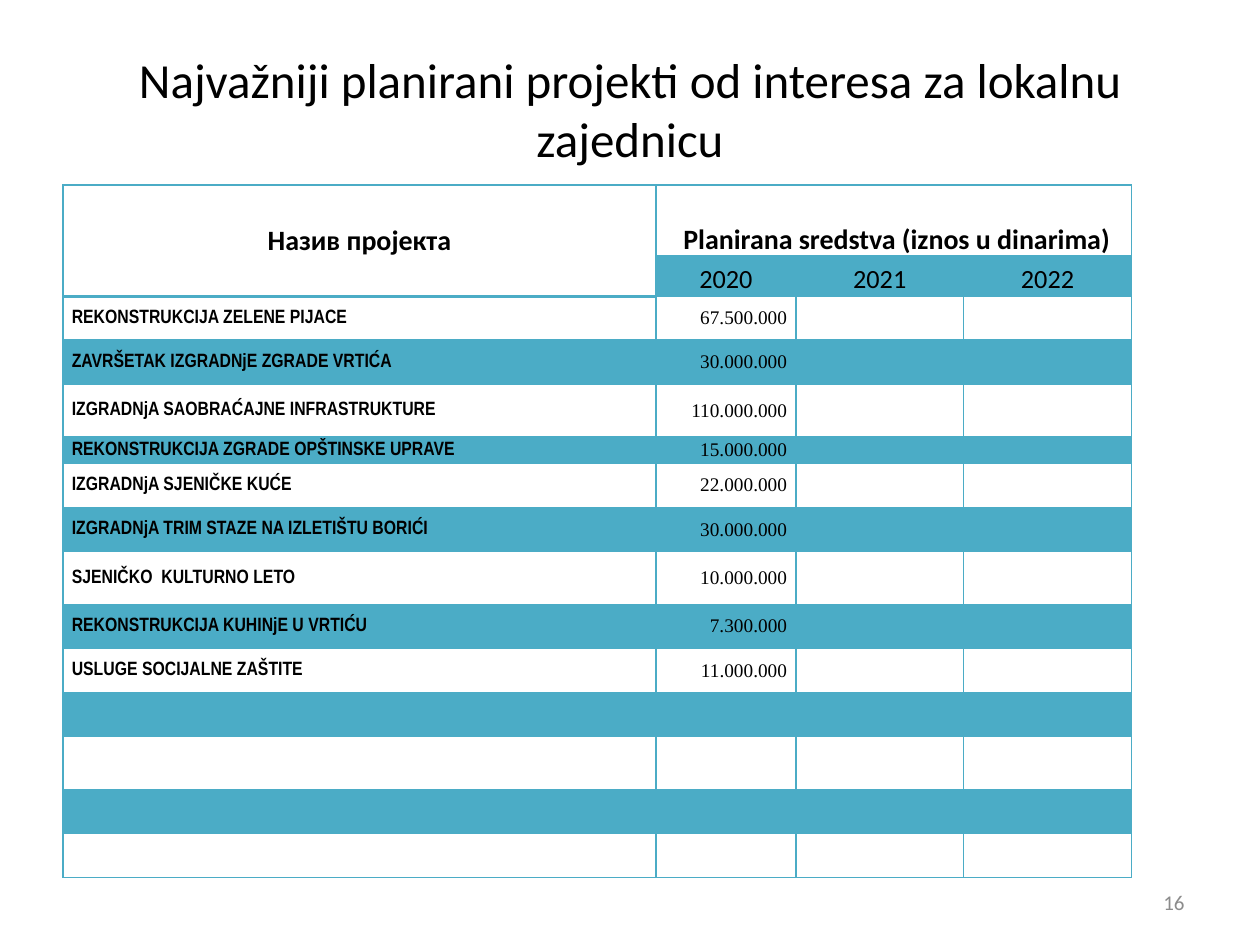
import lxml.etree
import pptx
import pptx.dml.color
import pptx.enum.text
import pptx.oxml.ns
import pptx.util

HUES = {"ink": "000000", "teal": "4BACC6", "gray": "8C8C8C"}
ALIGN = pptx.enum.text.PP_ALIGN
SIDE = pptx.enum.text.MSO_ANCHOR
INCH = pptx.util.Inches
WIDE, HIGH = INCH(10), INCH(7.5)

HEAD = {"name": "Calibri", "size": pptx.util.Pt(16), "bold": True}
YEAR = {"name": "Calibri", "size": pptx.util.Pt(15), "bold": False}
TASK = {"name": "Arial Narrow", "size": pptx.util.Pt(11), "bold": True}
SUM = {"name": "Times New Roman", "size": pptx.util.Pt(11), "bold": False}
TITLE = {"name": "Calibri", "size": pptx.util.Pt(28), "bold": False}
PAGE = {"name": "Calibri", "size": pptx.util.Pt(12), "bold": False}

YEARS = ["2020", "2021", "2022"]
TASKS = [
    ("REKONSTRUKCIJA ZELENE PIJACE", "67.500.000"),
    ("ZAVRŠETAK IZGRADNjE ZGRADE VRTIĆA", "30.000.000"),
    ("IZGRADNjA SAOBRAĆAJNE INFRASTRUKTURE", "110.000.000"),
    ("REKONSTRUKCIJA ZGRADE OPŠTINSKE UPRAVE", "15.000.000"),
    ("IZGRADNjA SJENIČKE KUĆE", "22.000.000"),
    ("IZGRADNjA TRIM STAZE NA IZLETIŠTU BORIĆI", "30.000.000"),
    ("SJENIČKO  KULTURNO LETO", "10.000.000"),
    ("REKONSTRUKCIJA KUHINjE U VRTIĆU", "7.300.000"),
    ("USLUGE SOCIJALNE ZAŠTITE", "11.000.000"),
]
COLS = [4.7, 1.11, 1.33, 1.33]
ROWS = [0.57, 0.31] + [0.35] * 13
ROWS[4] = ROWS[8] = ROWS[12] = 0.42
ROWS[5] = 0.21


def apply(item, values):
    for key, value in values.items():
        setattr(item, key, value)


def node(base, tag, **values):
    return lxml.etree.SubElement(base, pptx.oxml.ns.qn(tag), **values)


def write(frame, text, look, align, hue="ink"):
    para = frame.paragraphs[0]
    para.alignment = align
    run = para.add_run()
    run.text = text
    apply(run.font, look)
    run.font.color.rgb = pptx.dml.color.RGBColor.from_string(HUES[hue])


def border(cell, thick):
    for side in "LRTB":
        width = pptx.util.Pt(2 if side == "B" and thick else 1)
        line = node(cell._tc.get_or_add_tcPr(), f"a:ln{side}", w=str(width))
        node(node(line, "a:solidFill"), "a:srgbClr", val=HUES["teal"])


def tint(cell, shade):
    if not shade:
        cell.fill.background()
        return
    cell.fill.solid()
    cell.fill.fore_color.rgb = pptx.dml.color.RGBColor.from_string(HUES["teal"])
    hue = cell._tc.tcPr.find(".//" + pptx.oxml.ns.qn("a:srgbClr"))
    node(hue, "a:alpha", val="20000")


def style(grid):
    apply(grid, {"first_row": False, "horz_banding": False})
    pad = {"margin_left": INCH(0.07), "margin_right": INCH(0.07),
           "margin_top": 0, "margin_bottom": 0}
    for row in range(len(ROWS)):
        for col in range(len(COLS)):
            cell = grid.cell(row, col)
            apply(cell, pad | {"vertical_anchor": SIDE.MIDDLE})
            border(cell, row == 0 or (row == 1 and col == 0))
            tint(cell, row % 2 == 1 and (row > 1 or col > 0))


def fill(cell, text, look, align, anchor=SIDE.MIDDLE):
    cell.vertical_anchor = anchor
    write(cell.text_frame, text, look, align)


def table(slide, left, top, width, height):
    grid = slide.shapes.add_table(len(ROWS), len(COLS), left, top, width, height).table
    for col, share in zip(grid.columns, COLS):
        col.width = int(width * share / sum(COLS))
    for row, share in zip(grid.rows, ROWS):
        row.height = int(height * share / sum(ROWS))
    style(grid)
    grid.cell(0, 0).merge(grid.cell(1, 0))
    grid.cell(0, 1).merge(grid.cell(0, 3))
    fill(grid.cell(0, 0), "Назив пројекта", HEAD, ALIGN.CENTER)
    fill(grid.cell(0, 1), " Planirana sredstva (iznos u dinarima)", HEAD,
         ALIGN.CENTER, SIDE.BOTTOM)
    for col, year in enumerate(YEARS, 1):
        fill(grid.cell(1, col), year, YEAR, ALIGN.CENTER, SIDE.BOTTOM)
    for row, (task, cost) in enumerate(TASKS, 2):
        fill(grid.cell(row, 0), task, TASK, ALIGN.LEFT)
        fill(grid.cell(row, 1), cost, SUM, ALIGN.RIGHT)
    for cell in grid.iter_cells():
        if not cell.text:
            node(cell.text_frame.paragraphs[0]._p, "a:endParaRPr", sz="1100")


def title(slide, left, top, width, height):
    shape = slide.shapes.title
    apply(shape, {"left": left, "top": top, "width": width, "height": height})
    apply(shape.text_frame, {"vertical_anchor": SIDE.MIDDLE, "word_wrap": True})
    write(shape.text_frame,
          "Najvažniji planirani projekti od interesa za lokalnu zajednicu",
          TITLE, ALIGN.CENTER)


def number(slide, left, top, width, height):
    frame = slide.shapes.add_textbox(left, top, width, height).text_frame
    apply(frame, {"vertical_anchor": SIDE.MIDDLE, "word_wrap": True})
    write(frame, "16", PAGE, ALIGN.RIGHT, "gray")


def box(left, top, width, height):
    return int(WIDE * left), int(HIGH * top), int(WIDE * width), int(HIGH * height)


def main():
    deck = pptx.Presentation()
    apply(deck, {"slide_width": WIDE, "slide_height": HIGH})
    slide = deck.slides.add_slide(deck.slide_layouts[5])
    title(slide, *box(0.05, 0.04, 0.9, 0.15))
    number(slide, *box(0.72, 0.93, 0.23, 0.05))
    table(slide, *box(0.05, 0.196, 0.848, 0.733))
    deck.save("out.pptx")


if __name__ == "__main__":
    main()
